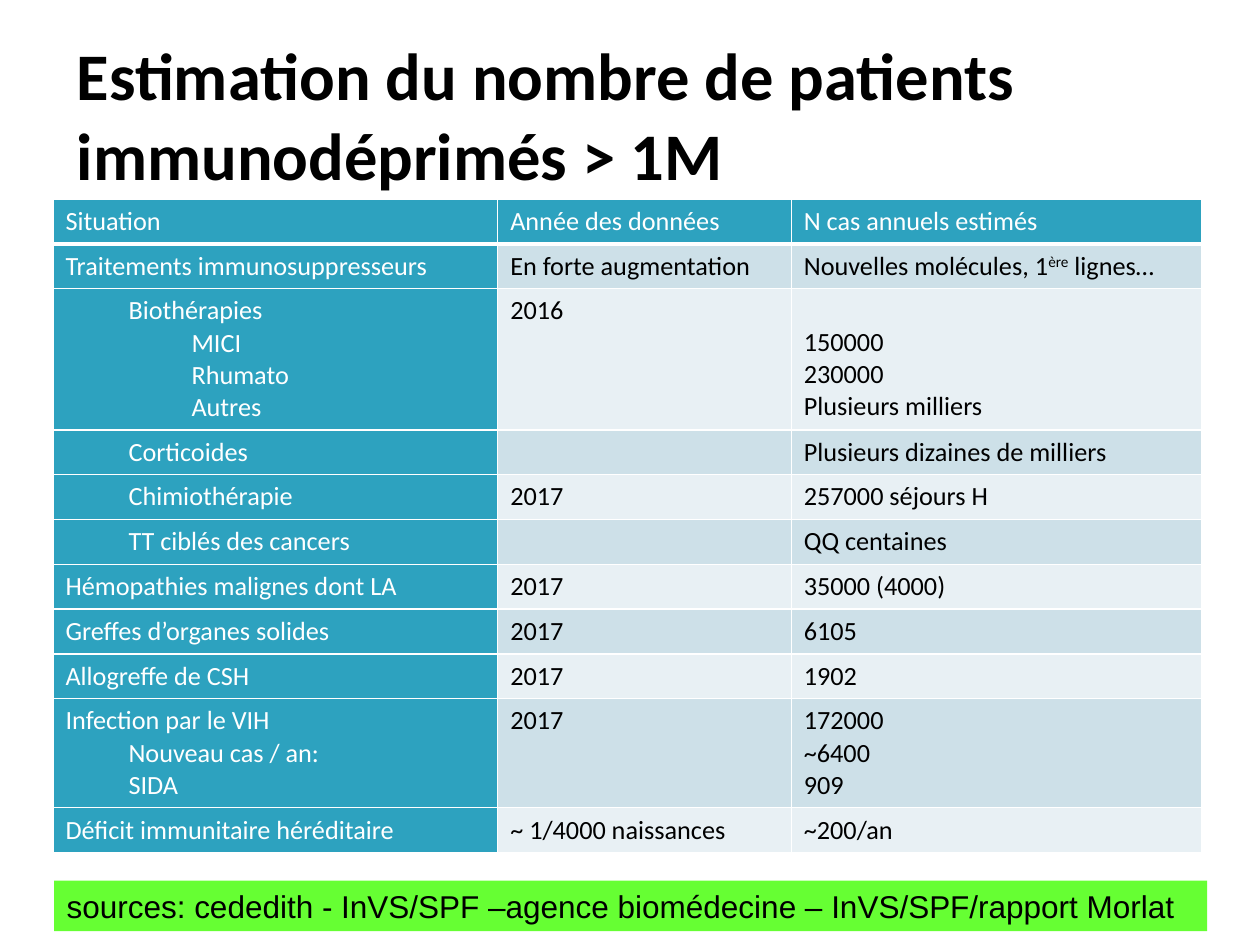
from lxml import etree
from pptx import Presentation
from pptx.dml.color import RGBColor
from pptx.enum.text import MSO_ANCHOR, MSO_AUTO_SIZE, PP_ALIGN
from pptx.oxml.ns import qn
from pptx.util import Inches, Pt

LEFT = PP_ALIGN.LEFT
MIDDLE = MSO_ANCHOR.MIDDLE
NO_AUTOFIT = MSO_AUTO_SIZE.NONE
GROW = MSO_AUTO_SIZE.SHAPE_TO_FIT_TEXT

TEAL, WHITE, BLACK, GREEN = "2DA2BF", "FFFFFF", "000000", "66FF33"
BANDS = ("E8F0F4", "CDE0E8")
TEXT_SIZE = 15
LINE_HEIGHT = 0.25
CELL_MARGIN = 0.05
COLUMN_WIDTHS = (3.53, 2.33, 3.26)

# One (situation, year, cases) tuple per row; lines are split at "\n",
# tabs give the indent level and "^" encloses a superscript.
ROWS = [
    ("Situation", "Année des données", "N cas annuels estimés"),
    ("Traitements immunosuppresseurs", "En forte augmentation",
     "Nouvelles molécules, 1^ère^ lignes…"),
    ("\tBiothérapies\n\t\tMICI\n\t\tRhumato\n\t\tAutres", "2016",
     "150000\n230000\nPlusieurs milliers"),
    ("\tCorticoides", "", "Plusieurs dizaines de milliers"),
    ("\tChimiothérapie", "2017", "257000 séjours H"),
    ("\tTT ciblés des cancers", "", "QQ centaines"),
    ("Hémopathies malignes dont LA", "2017", "35000 (4000)"),
    ("Greffes d’organes solides", "2017", "6105"),
    ("Allogreffe de CSH", "2017", "1902"),
    ("Infection par le VIH\n\tNouveau cas / an:\n\tSIDA", "2017",
     "172000\n~6400\n909"),
    ("Déficit immunitaire héréditaire", "~ 1/4000 naissances", "~200/an"),
]
BIOTHERAPY_ROW = 2


def color(value):
    return RGBColor.from_string(value)


def style_font(font, name, size, font_color, bold=False):
    font.name = name
    font.size = Pt(size)
    font.bold = bold
    font.color.rgb = color(font_color)


def add_title(slide, text):
    title = slide.shapes.title
    title.left, title.top = Inches(0.51), Inches(0.28)
    title.width, title.height = Inches(9), Inches(1.25)
    frame = title.text_frame
    frame.text = text
    frame.word_wrap = True
    frame.auto_size = NO_AUTOFIT
    frame.vertical_anchor = MIDDLE
    paragraph = frame.paragraphs[0]
    paragraph.alignment = LEFT
    style_font(paragraph.runs[0].font, "Calibri", 38, BLACK, bold=True)


def fill_paragraph(paragraph, line, font_color):
    """Write one line, reading its tabs as indent and "^" as superscript."""
    text = line.lstrip("\t")
    level = len(line) - len(text)
    if level:
        paragraph.level = level
        properties = paragraph._p.get_or_add_pPr()
        properties.set("marL", str(Inches(0.5 * level)))
        properties.set("indent", "0")
    for index, part in enumerate(text.split("^")):
        run = paragraph.add_run()
        run.text = part
        style_font(run.font, "Calibri", TEXT_SIZE, font_color)
        if index % 2:
            run._r.get_or_add_rPr().set("baseline", "30000")


def set_borders(cell, bottom_width):
    properties = cell._tc.get_or_add_tcPr()
    widths = {"a:lnL": 1, "a:lnR": 1, "a:lnT": 1, "a:lnB": bottom_width}
    for index, (tag, width) in enumerate(widths.items()):
        line = etree.Element(qn(tag), w=str(Pt(width)))
        fill = etree.SubElement(line, qn("a:solidFill"))
        etree.SubElement(fill, qn("a:srgbClr"), val=WHITE)
        properties.insert(index, line)


def fill_cell(cell, text, fill_color, font_color, bottom_width):
    cell.fill.solid()
    cell.fill.fore_color.rgb = color(fill_color)
    set_borders(cell, bottom_width)
    frame = cell.text_frame
    for index, line in enumerate(text.split("\n")):
        paragraph = frame.add_paragraph() if index else frame.paragraphs[0]
        if line:
            fill_paragraph(paragraph, line, font_color)
        else:
            etree.SubElement(paragraph._p, qn("a:endParaRPr"),
                             sz=str(TEXT_SIZE * 100))


def row_height(row):
    lines = 1 + max(text.count("\n") for text in row)
    return LINE_HEIGHT * lines + 2 * CELL_MARGIN


def add_patient_table(slide):
    heights = [row_height(row) for row in ROWS]
    table = slide.shapes.add_table(
        len(ROWS), len(COLUMN_WIDTHS), Inches(0.42), Inches(1.58),
        Inches(sum(COLUMN_WIDTHS)), Inches(sum(heights))).table
    table.first_col = True
    for column, width in zip(table.columns, COLUMN_WIDTHS):
        column.width = Inches(width)
    for row_index, row in enumerate(ROWS):
        table.rows[row_index].height = Inches(heights[row_index])
        for column_index, text in enumerate(row):
            is_header = row_index == 0 or column_index == 0
            fill_cell(table.cell(row_index, column_index), text,
                      TEAL if is_header else BANDS[row_index % 2],
                      WHITE if is_header else BLACK,
                      3 if row_index == 0 else 1)
    # The figures start beside the second line of the first column.
    table.cell(BIOTHERAPY_ROW, 2).margin_top = Inches(CELL_MARGIN + LINE_HEIGHT)


def add_sources(slide, text):
    box = slide.shapes.add_textbox(Inches(0.43), Inches(6.99),
                                   Inches(9.15), Inches(0.4))
    box.fill.solid()
    box.fill.fore_color.rgb = color(GREEN)
    frame = box.text_frame
    frame.text = text
    frame.word_wrap = False
    frame.auto_size = GROW
    style_font(frame.paragraphs[0].runs[0].font, "Arial", 18, BLACK)


def main():
    presentation = Presentation()
    presentation.slide_width = Inches(10)
    presentation.slide_height = Inches(7.5)
    slide = presentation.slides.add_slide(presentation.slide_layouts[5])
    add_title(slide, "Estimation du nombre de patients immunodéprimés > 1M")
    add_patient_table(slide)
    add_sources(slide, "sources: cededith - InVS/SPF –agence biomédecine "
                       "– InVS/SPF/rapport Morlat")
    presentation.save("out.pptx")


if __name__ == "__main__":
    main()
